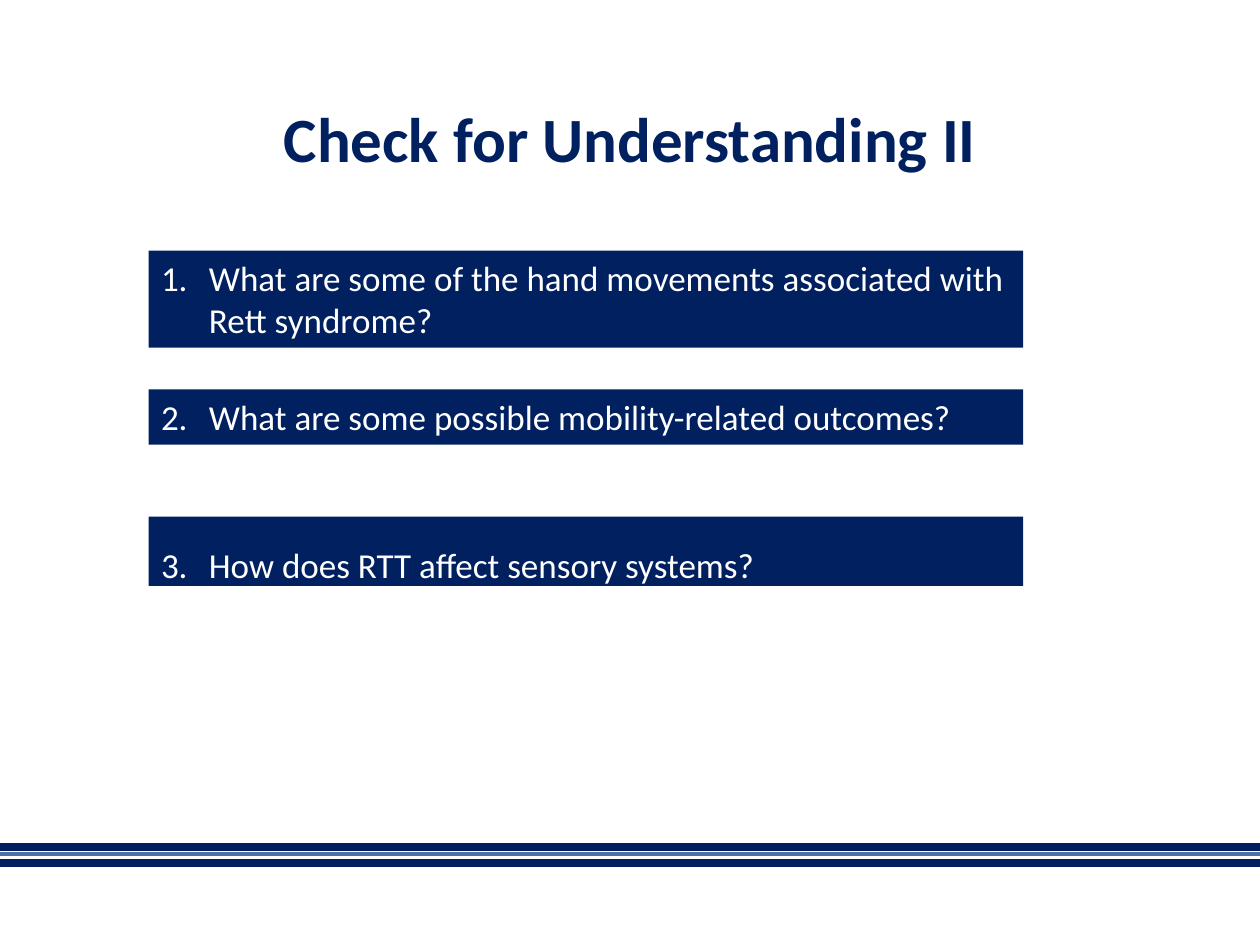
from dataclasses import dataclass

from lxml import etree
from pptx import Presentation
from pptx import util as u
from pptx.dml.color import RGBColor
from pptx.enum import shapes, text
from pptx.oxml import ns


@dataclass(frozen=True)
class Theme:
    font: str = "Calibri"
    navy: RGBColor = RGBColor(0x00, 0x20, 0x60)
    band: RGBColor = RGBColor(0x00, 0x1F, 0x5F)
    blue: RGBColor = RGBColor(0x50, 0x70, 0xA7)
    white: RGBColor = RGBColor(0xFF, 0xFF, 0xFF)
    head: int = 36
    body: int = 20


class Deck:
    def __init__(self, theme):
        self.theme = theme
        self.file = Presentation()
        self.file.slide_width = u.Inches(10)
        self.file.slide_height = u.Inches(7.5)
        self.slide = self.file.slides.add_slide(self.file.slide_layouts[6])

    def style(self, para, size, color, bold=False):
        for run in para.runs:
            run.font.name = self.theme.font
            run.font.size = u.Pt(size)
            run.font.bold = bold
            run.font.color.rgb = color

    def rule(self, top, color, width):
        y = u.Inches(top)
        line = self.slide.shapes.add_connector(
            shapes.MSO_CONNECTOR.STRAIGHT, 0, y, u.Inches(10), y)
        line.line.color.rgb = color
        line.line.width = u.Pt(width)
        etree.SubElement(line._element.spPr, ns.qn("a:effectLst"))

    def title(self, words, left, top, width, height):
        box = self.slide.shapes.add_textbox(
            *map(u.Inches, (left, top, width, height)))
        frame = box.text_frame
        frame.word_wrap = True
        frame.vertical_anchor = text.MSO_ANCHOR.MIDDLE
        frame.text = words
        para = frame.paragraphs[0]
        para.alignment = text.PP_ALIGN.CENTER
        para.line_spacing = 0.9
        self.style(para, self.theme.head, self.theme.navy, bold=True)

    def query(self, num, words, top, height, space):
        box = self.slide.shapes.add_shape(
            shapes.MSO_SHAPE.RECTANGLE,
            *map(u.Inches, (1.18, top, 6.94, height)))
        box.shadow.inherit = False
        box.fill.solid()
        box.fill.fore_color.rgb = self.theme.navy
        box.line.fill.background()
        frame = box.text_frame
        frame.word_wrap = True
        frame.auto_size = text.MSO_AUTO_SIZE.SHAPE_TO_FIT_TEXT
        frame.vertical_anchor = text.MSO_ANCHOR.TOP
        frame.text = words
        para = frame.paragraphs[0]
        para.alignment = text.PP_ALIGN.LEFT
        para.line_spacing = space
        # Hanging automatic number
        props = para._p.get_or_add_pPr()
        indent = u.Inches(0.38)
        props.set("marL", str(indent))
        props.set("indent", str(-indent))
        etree.SubElement(props, ns.qn("a:buFont"), typeface="+mj-lt")
        etree.SubElement(props, ns.qn("a:buAutoNum"),
                         type="arabicPeriod", startAt=str(num))
        self.style(para, self.theme.body, self.theme.white)


def main():
    theme = Theme()
    deck = Deck(theme)

    # Footer stripes
    for top, color, width in ((6.72, theme.band, 4.5),
                              (6.78, theme.blue, 2.25),
                              (6.85, theme.band, 4.5)):
        deck.rule(top, color, width)

    # Heading
    deck.title("Check for Understanding II", 0.69, 0.4, 8.62, 1.45)

    # Numbered questions: words, top, height, line spacing
    asks = (
        ("What are some of the hand movements associated with Rett syndrome?",
         1.99, 0.77, 1.0),
        ("What are some possible mobility-related outcomes?", 3.09, 0.44, 1.0),
        ("How does RTT affect sensory systems?", 4.1, 0.55, 1.5),
    )
    for num, ask in enumerate(asks, 1):
        deck.query(num, *ask)

    deck.file.save("out.pptx")


if __name__ == "__main__":
    main()
